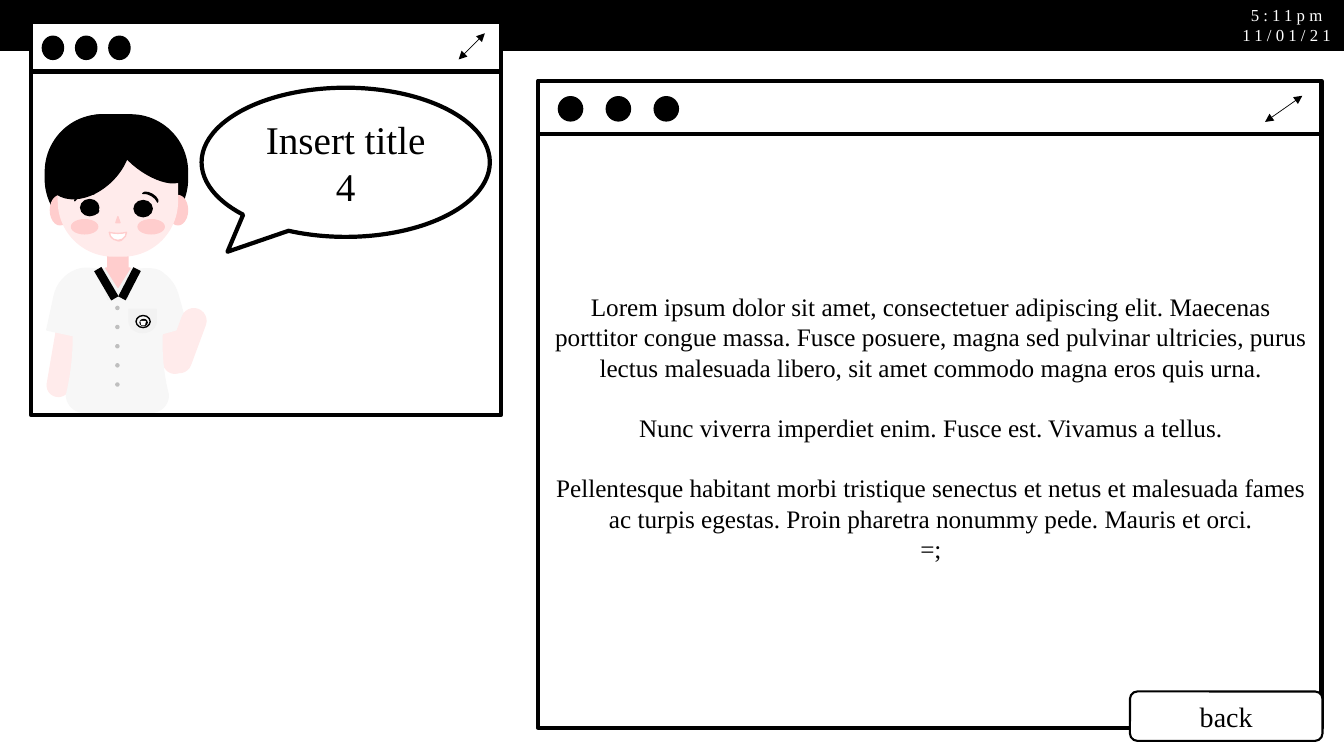
"""Build a slide with two desktop-style windows, a student and a back button."""
from lxml import etree
from pptx import Presentation
from pptx import util as u
from pptx.dml.color import RGBColor
from pptx.enum import shapes, text
from pptx.oxml.ns import qn

CELL = 0.1
COLS, ROWS = 133.33, 75
FONT = "Times New Roman"
COLOURS = {
    "black": "000000", "white": "FFFFFF", "skin": "FFEBEB", "blush": "FFCDCD",
    "shirt": "F7F7F7", "pocket": "F2F2F2", "button": "BFBFBF",
}
KINDS = {
    "rect": shapes.MSO_SHAPE.RECTANGLE, "oval": shapes.MSO_SHAPE.OVAL,
    "round": shapes.MSO_SHAPE.ROUNDED_RECTANGLE, "sleeve": shapes.MSO_SHAPE.FLOWCHART_DELAY,
    "moon": shapes.MSO_SHAPE.MOON, "triangle": shapes.MSO_SHAPE.ISOSCELES_TRIANGLE,
    "trapezoid": shapes.MSO_SHAPE.TRAPEZOID, "callout": shapes.MSO_SHAPE.OVAL_CALLOUT,
}
PARAGRAPHS = [
    "Lorem ipsum dolor sit amet, consectetuer adipiscing elit. Maecenas porttitor congue massa. "
    "Fusce posuere, magna sed pulvinar ultricies, purus lectus malesuada libero, sit amet "
    "commodo magna eros quis urna.",
    "Nunc viverra imperdiet enim. Fusce est. Vivamus a tellus.",
    "Pellentesque habitant morbi tristique senectus et netus et malesuada fames ac turpis "
    "egestas. Proin pharetra nonummy pede. Mauris et orci.",
    "=;",
]
HEAD_AND_ARMS = [
    ("round", (4.5, 11.4, 14.1, 12), "black", 0, [0.47]),
    ("oval", (5, 19.4, 1.9, 2.9), "blush"),
    ("oval", (16.7, 19.4, 1.9, 2.9), "blush"),
    ("round", (5.5, 27.6, 2.2, 11.8), "skin", 9.7, [0.5]),
    ("sleeve", (5.1, 26.8, 6.9, 6.5), "shirt", 282.2),
    ("round", (15.5, 27.4, 2.2, 9.7), "skin", 348.7, [0.5]),
    ("sleeve", (11.4, 27, 6.7, 6), "shirt", 254.4),
    ("round", (10.7, 24.4, 2, 2.5), "blush"),
    ("round", (5.8, 12.6, 11.8, 12.8), "skin", 0, [0.46]),
]
POCKET = [
    ("sleeve", (13, 30.5, 2.3, 2.7), "pocket", 90),
    ("oval", (13.5, 31.3, 1.4, 1.2), "shirt", 0, [], "black"),
    ("oval", (13.9, 31.7, 0.7, 0.6), "black"),
    ("trapezoid", (14, 31.9, 0.4, 0.3), "white", 180),
]
FACE = [
    ("oval", (5.4, 10.7, 6.7, 9.7), "black", 45.2),
    ("oval", (12.8, 10.6, 4.1, 8.8), "black", 307.5),
    ("triangle", (11.5, 21.5, 0.4, 0.6), "blush"),
    ("oval", (7.1, 21.8, 2.6, 1.4), "blush"),
    ("oval", (13.7, 21.8, 2.6, 1.4), "blush"),
    ("moon", (8.1, 18.4, 0.4, 2), "black", 70.8, [0.34]),
    ("moon", (14.8, 18.6, 0.4, 1.7), "black", 120.4, [0.34]),
    ("oval", (8, 19.8, 1.8, 1.6), "black"),
    ("moon", (8.8, 20.3, 0.4, 1.6), "black", 270, [0.34]),
    ("moon", (14, 20.3, 0.4, 1.5), "black", 270, [0.34]),
    ("oval", (11.4, 23.2, 0.8, 0.7), "white", 0, [], "blush"),
    ("moon", (11.3, 22.6, 0.8, 1.7), "white", 270, [0.88], "blush"),
    ("oval", (13.3, 19.9, 1.8, 1.6), "black"),
    ("round", (17.3, 30.5, 2.4, 6.6), "skin", 20.3, [0.5]),
]
TORSO = [
    [(6.6, 28.3), (6.6, 27.4), (7.4, 26.7), (8.3, 26.7)],
    [(15, 26.7), (16, 26.7), (16.7, 27.4), (16.7, 28.3)],
    [(16.7, 28.3), (15.9, 32), (15.8, 35.7), (16.7, 39.2)],
    [(16.7, 39.2), (16.7, 40.1), (16, 40.9), (15, 40.9)],
    [(8.3, 40.9), (7.4, 40.9), (6.6, 40.1), (6.6, 39.2)],
    [(6.6, 39.2), (7.3, 36.3), (7.7, 32.3), (6.6, 28.3)],
]
COLLAR_OPENING = [(9.9, 26.7), (13.4, 26.7), (12.6, 29.7), (10.7, 29.7)]


def grid(*cells):
    """Convert grid cells to lengths."""
    return [u.Inches(c * CELL) for c in cells]


def rgb(name):
    """Look up a colour."""
    return RGBColor.from_string(COLOURS[name])


def paint(sp, fill, line, width):
    """Give a shape its fill and outline without a shadow."""
    sp.shadow.inherit = False
    sp.fill.solid()
    sp.fill.fore_color.rgb = rgb(fill)
    sp.line.color.rgb = rgb(line)
    sp.line.width = u.Pt(width)


def add_preset(parent, kind, box, fill, rot=0, adj=(), line=None, width=1):
    """Add a preset shape."""
    sp = parent.add_shape(KINDS[kind], *grid(*box))
    for i, value in enumerate(adj):
        sp.adjustments[i] = value
    sp.rotation = rot
    paint(sp, fill, line or fill, width)
    return sp


def add_outline(parent, points, fill):
    """Add a closed freeform through the points."""
    first, *rest = [grid(*pt) for pt in points]
    builder = parent.build_freeform(*first)
    builder.add_line_segments(rest, close=True)
    paint(builder.convert_to_shape(), fill, fill, 1)


def add_line(parent, ends, width, arrows=False):
    """Add a straight black line, with arrowheads if asked."""
    line = parent.add_connector(shapes.MSO_CONNECTOR.STRAIGHT, *grid(*ends))
    line.line.color.rgb = rgb("black")
    line.line.width = u.Pt(width)
    props = line._element.spPr
    if arrows:
        for tag in ("a:headEnd", "a:tailEnd"):
            etree.SubElement(props.find(qn("a:ln")), qn(tag), type="triangle")
    etree.SubElement(props, qn("a:effectLst"))


def bezier(curve, steps=10):
    """List points along a cubic curve."""
    (ax, ay), (bx, by), (cx, cy), (dx, dy) = curve
    points = []
    for i in range(steps + 1):
        t = i / steps
        k = ((1 - t) ** 3, 3 * t * (1 - t) ** 2, 3 * t * t * (1 - t), t ** 3)
        points.append((k[0] * ax + k[1] * bx + k[2] * cx + k[3] * dx,
                       k[0] * ay + k[1] * by + k[2] * cy + k[3] * dy))
    return points


def write(sp, lines, size, colour="black", gaps=()):
    """Fill a shape with centred paragraphs, spaced before those in gaps."""
    tf = sp.text_frame
    tf.auto_size = text.MSO_AUTO_SIZE.NONE
    tf.word_wrap = True
    tf.vertical_anchor = text.MSO_ANCHOR.MIDDLE
    for i, line in enumerate(lines):
        p = tf.paragraphs[0] if i == 0 else tf.add_paragraph()
        p.text = line
        p.alignment = text.PP_ALIGN.CENTER
        p.space_before = u.Pt(size * 1.2 if i in gaps else 0)
        p.font.name, p.font.size = FONT, u.Pt(size)
        p.font.color.rgb = rgb(colour)


def place(sp, box):
    """Bring a placeholder to the front and set its box."""
    sp.left, sp.top, sp.width, sp.height = grid(*box)
    sp._element.getparent().append(sp._element)


def add_window(slide, box, bar, dot, step, arrow):
    """Add a framed window with a title bar and return its shapes."""
    parent = slide.shapes.add_group_shape().shapes
    add_preset(parent, "rect", box, "white", line="black", width=3)
    add_line(parent, (box[0], bar, box[0] + box[2], bar), 3)
    x, y, w, h = dot
    for i in range(3):
        add_preset(parent, "oval", (x + i * step, y, w, h), "black")
    add_line(parent, arrow, 0.5, arrows=True)
    return parent


def add_student(parent):
    """Draw the waving student."""
    for part in HEAD_AND_ARMS:
        add_preset(parent, *part)
    add_outline(parent, [pt for curve in TORSO for pt in bezier(curve)], "shirt")
    add_outline(parent, COLLAR_OPENING, "pocket")
    add_preset(parent, "triangle", (10.5, 26.6, 2.4, 1.9), "blush", 180)
    for ends in ((9.7, 26.7, 11.4, 29.6), (12.1, 29.6, 13.6, 26.7)):
        add_line(parent, ends, 6)
    for i in range(5):
        add_preset(parent, "oval", (11.5, 30.4 + 1.9 * i, 0.3, 0.3), "button")
    for part in POCKET + FACE:
        add_preset(parent, *part)


def add_clock(slide):
    """Add the black top bar with the time and date."""
    add_preset(slide.shapes, "rect", (0, 0, COLS, 5), "black")
    sp = slide.shapes.add_textbox(*grid(122, 0, 11.3, 5))
    write(sp, ["5:11pm", "11/01/21"], 12, "white")
    sp.text_frame.word_wrap = False
    for p in sp.text_frame.paragraphs:
        p.runs[0]._r.get_or_add_rPr().set("spc", "300")


def main():
    """Build and save the slide."""
    prs = Presentation()
    prs.slide_width, prs.slide_height = grid(COLS, ROWS)
    slide = prs.slides.add_slide(prs.slide_layouts[1])
    title, body = slide.placeholders
    add_clock(slide)
    add_window(slide, (53.4, 8, 77.7, 64.2), 13.3, (55.4, 9.6, 2.4, 2.4), 4.75,
               (129.2, 9.5, 125.5, 12.1))
    place(body, (53.7, 13.9, 77.3, 57))
    write(body, PARAGRAPHS, 18, gaps=(1, 2))
    for p in body.text_frame.paragraphs:
        props = p._p.get_or_add_pPr()
        props.set("marL", "0")
        props.set("indent", "0")
        etree.SubElement(props, qn("a:buNone"))
        props.append(props.find(qn("a:defRPr")))
    add_student(add_window(slide, (3.1, 2.2, 46.6, 39), 7.1, (4.2, 3.6, 2.1, 2.3), 3.3,
                           (48.1, 3.3, 45.5, 5.9)))
    add_preset(slide.shapes, "callout", (20, 8.7, 28.6, 14.8), "white",
               adj=(-0.41, 0.6), line="black", width=3)
    place(title, (24.2, 10.9, 20.2, 10.4))
    write(title, ["Insert title 4"], 28)
    back = add_preset(slide.shapes, "round", (112.1, 68.6, 19.1, 4.9), "white",
                      adj=[0.15], line="black", width=1.5)
    write(back, ["back"], 20)
    prs.save("out.pptx")


if __name__ == "__main__":
    main()
